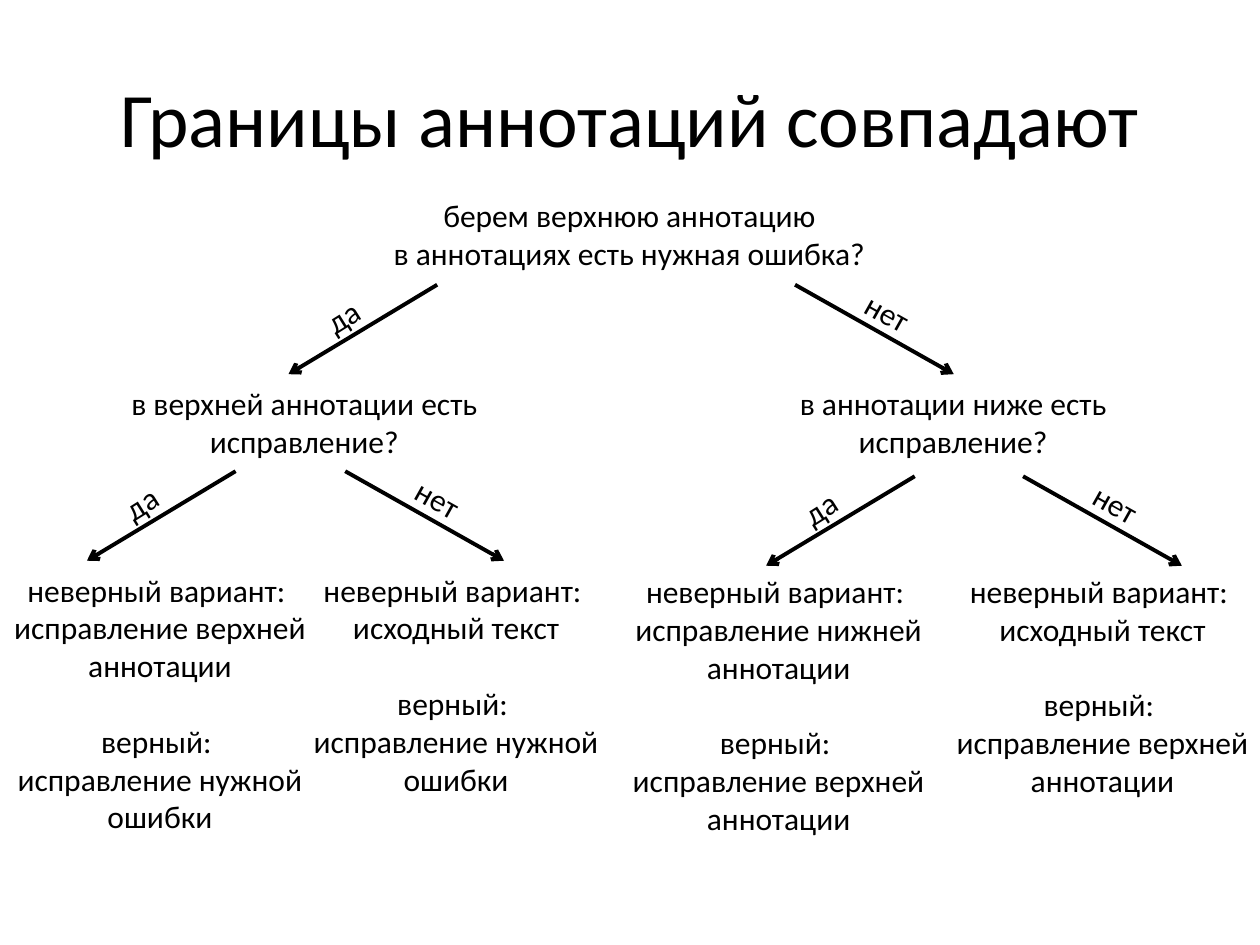
from lxml import etree
from pptx import Presentation
from pptx.dml.color import RGBColor
from pptx.enum.shapes import MSO_CONNECTOR
from pptx.enum.text import MSO_ANCHOR, MSO_AUTO_SIZE, PP_ALIGN
from pptx.oxml.ns import qn
from pptx.util import Inches, Pt

CENTER, LEFT = PP_ALIGN.CENTER, PP_ALIGN.LEFT
MIDDLE = MSO_ANCHOR.MIDDLE
GROW = MSO_AUTO_SIZE.SHAPE_TO_FIT_TEXT
STRAIGHT = MSO_CONNECTOR.STRAIGHT

# Content
TITLE = "Границы аннотаций совпадают"
WRONG, RIGHT = "неверный вариант: ", "верный: "

# Questions: box (left, top, width, height), wrapping, lines
QUESTIONS = [
    ((3, 1.51, 3.99, 0.71), False,
     ["берем верхнюю аннотацию", "в аннотациях есть нужная ошибка?"]),
    ((0.24, 3, 4.35, 0.71), True, ["в верхней аннотации есть исправление?"]),
    ((5.55, 3, 4.03, 0.71), True, ["в аннотации ниже есть исправление?"]),
]

# Outcomes: box, wrong variant, right variant
OUTCOMES = [
    ((-0.33, 4.48, 3.2, 2.22), "исправление верхней аннотации", "исправление нужной ошибки"),
    ((2.04, 4.48, 3.16, 1.92), "исходный текст", "исправление нужной ошибки"),
    ((4.58, 4.49, 3.2, 2.22), "исправление нижней аннотации", "исправление верхней аннотации"),
    ((7.17, 4.49, 3.16, 1.92), "исходный текст", "исправление верхней аннотации"),
]

# Forks: x where "да" starts, x where "нет" starts, shared y
FORKS = [(3.47, 6.31, 2.26), (1.87, 2.74, 3.74), (7.26, 8.12, 3.78)]
DROP = 0.71

# Answers: text, arrow run, label offset (x, y), label width, rotation
ANSWERS = [
    ("да", -1.18, (-0.98, 0.05), 0.46, 327.9),
    ("нет", 1.26, (0.46, 0.02), 0.56, 29.3),
]
LABEL_HEIGHT = 0.4
LINE_PITCH = 21.6

BLACK = "000000"
BODY_FONT = {"name": "Calibri", "size": Pt(18)}
TITLE_FONT = {"name": "Calibri", "size": Pt(44)}


def color(hex_value):
    return RGBColor.from_string(hex_value)


def write(paragraph, text, font, align):
    paragraph.alignment = align
    run = paragraph.add_run()
    run.text = text
    for attribute, value in font.items():
        setattr(run.font, attribute, value)
    run.font.color.rgb = color(BLACK)


def add_text(slide, box, lines, wrap=True, align=CENTER, rotation=0):
    textbox = slide.shapes.add_textbox(*map(Inches, box))
    textbox.rotation = rotation
    frame = textbox.text_frame
    frame.word_wrap, frame.auto_size = wrap, GROW
    for index, line in enumerate(lines):
        paragraph = frame.add_paragraph() if index else frame.paragraphs[0]
        write(paragraph, line, BODY_FONT, align)
        if line == RIGHT:
            paragraph.space_before = Pt(LINE_PITCH)


def add_arrow(slide, x, y, run):
    arrow = slide.shapes.add_connector(
        STRAIGHT, *map(Inches, (x, y, x + run, y + DROP)))
    arrow.line.color.rgb = color(BLACK)
    arrow.line.width = Pt(2.25)
    etree.SubElement(arrow.line._get_or_add_ln(), qn("a:tailEnd"), type="arrow")
    etree.SubElement(arrow._element.spPr, qn("a:effectLst"))


def main():
    deck = Presentation()
    deck.slide_width, deck.slide_height = Inches(10), Inches(7.5)
    slide = deck.slides.add_slide(deck.slide_layouts[5])

    # Title
    title = slide.shapes.title
    title.left, title.top, title.width, title.height = map(Inches, (0.5, 0.3, 9, 1.25))
    title.text_frame.vertical_anchor = MIDDLE
    write(title.text_frame.paragraphs[0], TITLE, TITLE_FONT, CENTER)

    # Questions and outcomes
    for box, wrap, lines in QUESTIONS:
        add_text(slide, box, lines, wrap)
    for box, wrong, right in OUTCOMES:
        add_text(slide, box, [WRONG, wrong, RIGHT, right])

    # Arrows with their answers
    for yes_x, no_x, y in FORKS:
        for x, (answer, run, (dx, dy), width, rotation) in zip((yes_x, no_x), ANSWERS):
            add_arrow(slide, x, y, run)
            add_text(slide, (x + dx, y + dy, width, LABEL_HEIGHT), [answer],
                     wrap=False, align=LEFT, rotation=rotation)

    deck.save("out.pptx")


if __name__ == "__main__":
    main()
